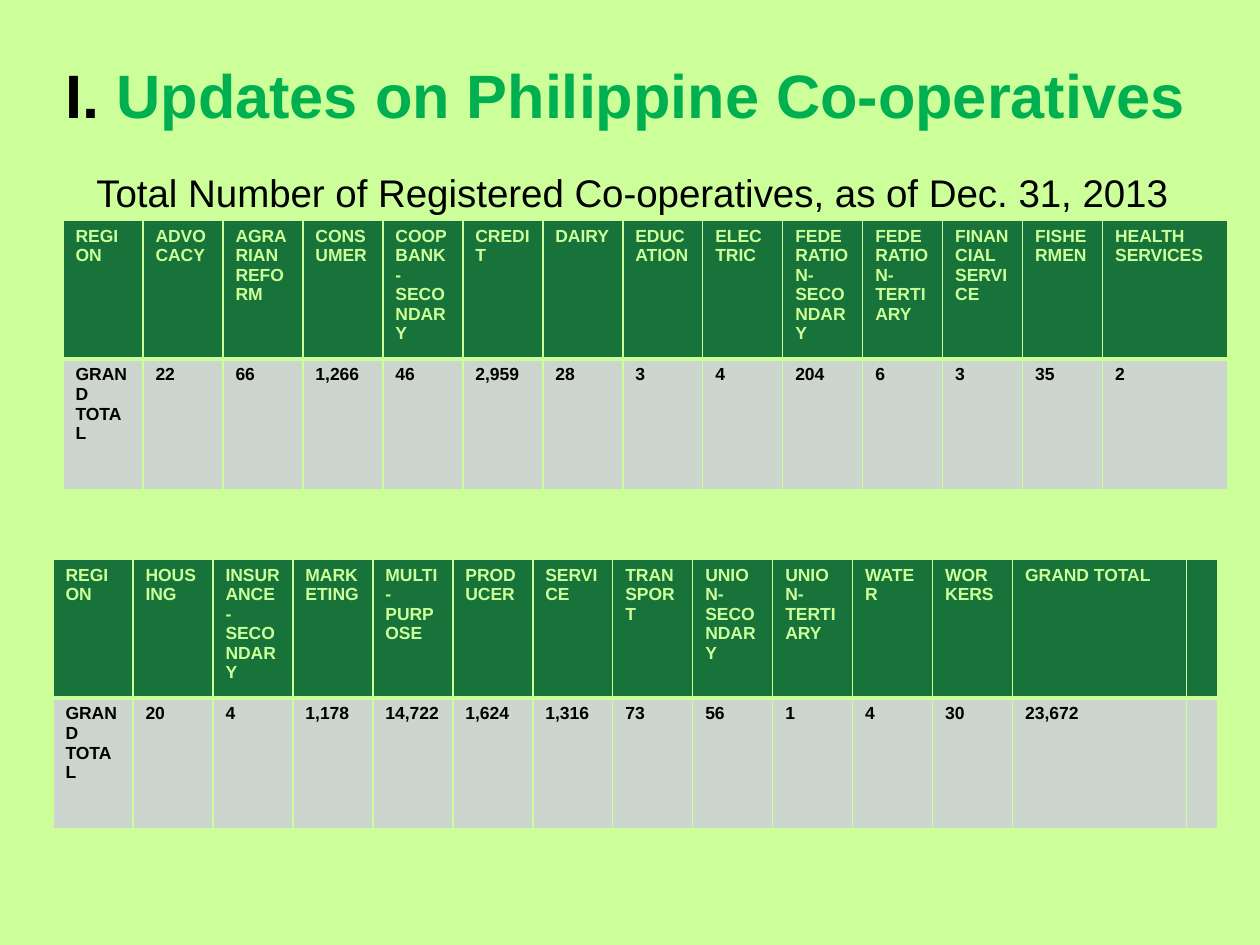
"""Build the slide on registered Philippine co-operatives."""
from dataclasses import dataclass

from lxml.etree import SubElement
from pptx import Presentation
from pptx.dml.color import RGBColor
from pptx.enum.text import MSO_ANCHOR
from pptx.oxml.ns import qn
from pptx.util import Emu, Pt


@dataclass(frozen=True)
class Theme:
    """Colours, font and type sizes."""
    font: str = "Arial"
    back: str = "CCFF99"
    ink: str = "000000"
    accent: str = "00B050"
    head_fill: str = "177339"
    body_fill: str = "CCD5CE"
    title: int = 35
    subtitle: int = 22
    cell: int = 10
    thin: int = 1
    thick: int = 3


THEME = Theme()
COL, ROW = 80, 131

SECTORS_1 = [
    ("REGION", "GRAND TOTAL"), ("ADVOCACY", "22"), ("AGRARIAN REFORM", "66"),
    ("CONSUMER", "1,266"), ("COOP BANK-SECONDARY", "46"), ("CREDIT", "2,959"),
    ("DAIRY", "28"), ("EDUCATION", "3"), ("ELECTRIC", "4"),
    ("FEDERATION-SECONDARY", "204"), ("FEDERATION-TERTIARY", "6"),
    ("FINANCIAL SERVICE", "3"), ("FISHERMEN", "35"), ("HEALTH SERVICES", "2"),
]
SECTORS_2 = [
    ("REGION", "GRAND TOTAL"), ("HOUSING", "20"), ("INSURANCE - SECONDARY", "4"),
    ("MARKETING", "1,178"), ("MULTI-PURPOSE", "14,722"), ("PRODUCER", "1,624"),
    ("SERVICE", "1,316"), ("TRANSPORT", "73"), ("UNION-SECONDARY", "56"),
    ("UNION-TERTIARY", "1"), ("WATER", "4"), ("WORKERS", "30"),
    ("GRAND TOTAL", "23,672"), ("", ""),
]


def px(n):
    """Turn pixels at 126 to the inch into EMU."""
    return Emu(round(n * 914400 / 126))


def style_run(r, size, color, bold=False):
    """Set the font of one run."""
    r.font.name, r.font.size, r.font.bold = THEME.font, Pt(size), bold
    r.font.color.rgb = RGBColor.from_string(color)


def add_text(s, box, parts, size, bold=False, anchor=MSO_ANCHOR.TOP, top=6):
    """Add a one-paragraph text box made of (text, colour) parts."""
    tf = s.shapes.add_textbox(*map(px, box)).text_frame
    tf.word_wrap = True
    tf.vertical_anchor = anchor
    tf.margin_top = px(top)
    for text, color in parts:
        r = tf.paragraphs[0].add_run()
        r.text = text
        style_run(r, size, color, bold)


def set_borders(cell, **widths):
    """Draw the cell's sides (L, R, T, B) with widths in points."""
    tc_pr = cell._tc.get_or_add_tcPr()
    for side, width in widths.items():
        ln = SubElement(tc_pr, qn(f"a:ln{side}"), w=str(Pt(width)))
        fill = SubElement(ln, qn("a:solidFill"))
        SubElement(fill, qn("a:srgbClr"), val=THEME.back)


def fill_cell(cell, text, header):
    """Write and style one header or body cell."""
    thin, thick = THEME.thin, THEME.thick
    set_borders(cell, L=thin, R=thin, T=thin if header else thick,
                B=thick if header else thin)
    cell.fill.solid()
    cell.fill.fore_color.rgb = RGBColor.from_string(
        THEME.head_fill if header else THEME.body_fill)
    cell.text_frame.text = text
    for r in cell.text_frame.paragraphs[0].runs:
        style_run(r, THEME.cell, THEME.back if header else THEME.ink, True)


def add_sector_table(s, x, y, sectors, last_widths):
    """Add a header row and a totals row, one column per sector."""
    widths = [COL] * (len(sectors) - len(last_widths)) + last_widths
    table = s.shapes.add_table(2, len(sectors), px(x), px(y),
                               px(sum(widths)), px(2 * ROW)).table
    table.first_row = table.horz_banding = False
    for row in table.rows:
        row.height = px(ROW)
    for i, (sector, width) in enumerate(zip(sectors, widths)):
        table.columns[i].width = px(width)
        for j, text in enumerate(sector):
            fill_cell(table.cell(j, i), text, header=j == 0)


def main():
    """Build and save the slide."""
    prs = Presentation()
    prs.slide_width, prs.slide_height = px(1260), px(945)
    s = prs.slides.add_slide(prs.slide_layouts[6])
    s.background.fill.solid()
    s.background.fill.fore_color.rgb = RGBColor.from_string(THEME.back)
    add_text(s, (53, 32, 1155, 105),
             [("I. ", THEME.ink), ("Updates on Philippine Co-operatives", THEME.accent)],
             THEME.title, bold=True, anchor=MSO_ANCHOR.BOTTOM)
    add_text(s, (84, 157, 1124, 703),
             [("Total Number of Registered Co-operatives, as of Dec. 31, 2013", THEME.ink)],
             THEME.subtitle, top=12)
    add_sector_table(s, 63, 220, SECTORS_1, [125])
    add_sector_table(s, 53, 559, SECTORS_2, [174, 31])
    prs.save("out.pptx")


if __name__ == "__main__":
    main()
